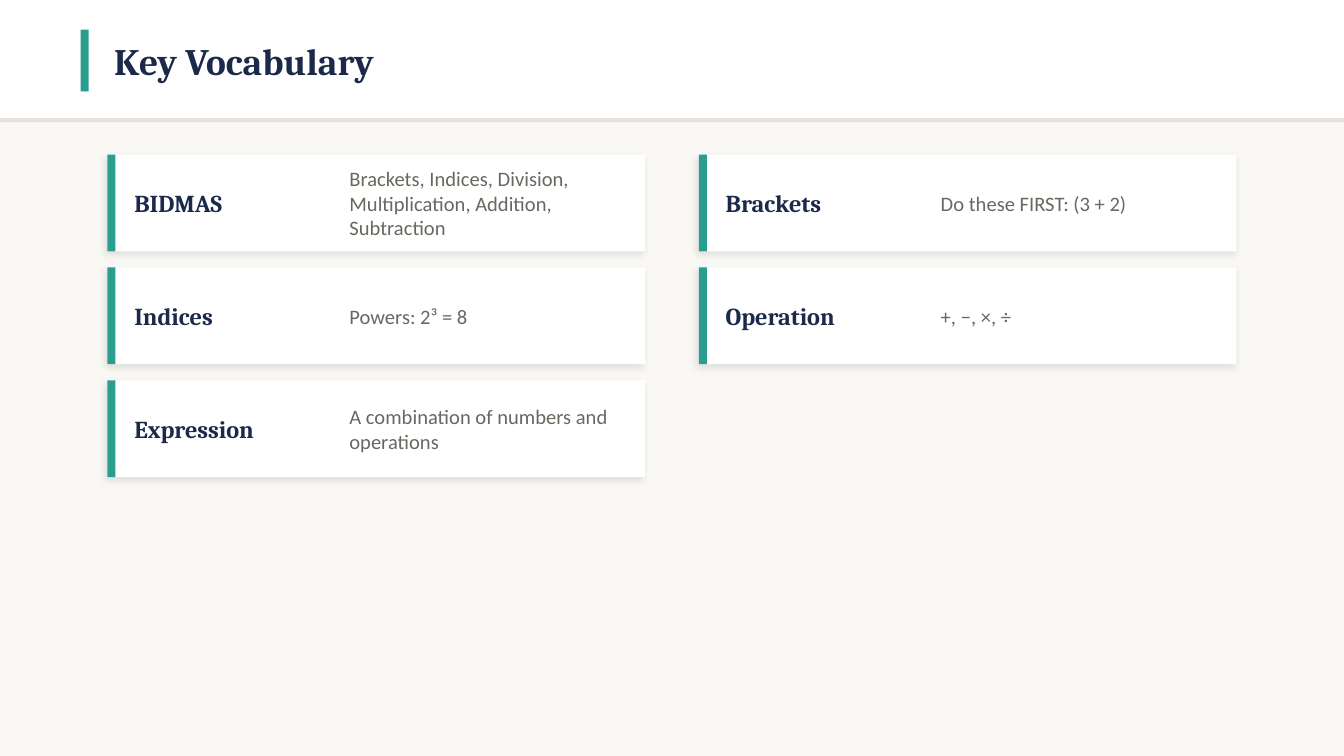
from dataclasses import dataclass

from pptx import Presentation
from pptx.dml.color import RGBColor
from pptx.enum.shapes import MSO_SHAPE
from pptx.enum.text import MSO_ANCHOR, MSO_AUTO_SIZE, PP_ALIGN
from pptx.oxml import parse_xml
from pptx.oxml.ns import nsdecls, qn
from pptx.util import Emu, Pt


@dataclass(frozen=True)
class Theme:
    """Colours, fonts and type sizes of the deck."""
    paper: str = "FAF8F5"
    card: str = "FFFFFF"
    rule: str = "E5E2DC"
    accent: str = "2A9D8F"
    navy: str = "1B2A4A"
    muted: str = "6B6660"
    heading_font: str = "Cambria"
    body_font: str = "Calibri"
    title_size: int = 20
    term_size: int = 13
    meaning_size: int = 11


THEME = Theme()
PX_PER_INCH = 200
EMU_PER_PX = 914400 // PX_PER_INCH
PAGE_WIDTH, PAGE_HEIGHT = 2000, 1125
ACCENT_WIDTH = 12
CARD_WIDTH, CARD_HEIGHT = 800, 144
COLUMNS, COLUMN_GAP, ROW_GAP = 2, 80, 24

VOCABULARY = [
    ("BIDMAS", "Brackets, Indices, Division, Multiplication, Addition, Subtraction"),
    ("Brackets", "Do these FIRST: (3 + 2)"),
    ("Indices", "Powers: 2³ = 8"),
    ("Operation", "+, −, ×, ÷"),
    ("Expression", "A combination of numbers and operations"),
]


def px(length):
    """Turn whole pixels into EMU."""
    return Emu(length * EMU_PER_PX)


def add_block(page, left, top, width, height, color):
    """Add a plain filled rectangle without line or shadow."""
    block = page.shapes.add_shape(
        MSO_SHAPE.RECTANGLE, px(left), px(top), px(width), px(height))
    block.fill.solid()
    block.fill.fore_color.rgb = RGBColor.from_string(color)
    block.line.fill.background()
    block.shadow.inherit = False
    return block


def add_soft_shadow(block):
    """Give a block a faint outer shadow."""
    effects = block.element.spPr.find(qn("a:effectLst"))
    effects.append(parse_xml(
        f'<a:outerShdw {nsdecls("a")} blurRad="{Pt(4)}" dist="{Pt(2)}" '
        f'dir="{135 * 60000}" algn="bl" rotWithShape="0">'
        '<a:srgbClr val="000000"><a:alpha val="10000"/></a:srgbClr></a:outerShdw>'))


def write_text(box, text, font_name, size, color, bold=False):
    """Fill a box with one left-aligned, vertically centred paragraph."""
    frame = box.text_frame
    frame.text = text
    frame.word_wrap = True
    frame.auto_size = MSO_AUTO_SIZE.NONE
    frame.vertical_anchor = MSO_ANCHOR.MIDDLE
    frame.margin_left = frame.margin_right = 0
    frame.margin_top = frame.margin_bottom = 0
    para = frame.paragraphs[0]
    para.alignment = PP_ALIGN.LEFT
    para.font.name = font_name
    para.font.size = Pt(size)
    para.font.bold = bold
    para.font.color.rgb = RGBColor.from_string(color)


def add_header(page, left, top, width, height, text):
    """Place the header band, its rule, accent bar and title."""
    add_block(page, left, top, width, height, THEME.card)
    add_block(page, left, top + height - 4, width, 6, THEME.rule)
    add_block(page, left + 120, top + 44, ACCENT_WIDTH, 92, THEME.accent)
    title = page.shapes.title
    title.left, title.top = px(left + 170), px(top + 30)
    title.width, title.height = px(1700), px(120)
    write_text(title, text, THEME.heading_font, THEME.title_size, THEME.navy, True)
    title.element.getparent().append(title.element)


def add_card(page, left, top, width, height, term, meaning):
    """Place one vocabulary card with its term and meaning."""
    add_soft_shadow(add_block(page, left, top, width, height, THEME.card))
    add_block(page, left, top, ACCENT_WIDTH, height, THEME.accent)
    term_box = page.shapes.add_textbox(px(left + 40), px(top), px(320), px(height))
    write_text(term_box, term, THEME.heading_font, THEME.term_size, THEME.navy, True)
    meaning_box = page.shapes.add_textbox(
        px(left + 360), px(top), px(width - 380), px(height))
    write_text(meaning_box, meaning, THEME.body_font, THEME.meaning_size, THEME.muted)


def add_card_grid(page, left, top, entries):
    """Place the vocabulary cards row by row."""
    for index, (term, meaning) in enumerate(entries):
        row, column = divmod(index, COLUMNS)
        add_card(page,
                 left + column * (CARD_WIDTH + COLUMN_GAP),
                 top + row * (CARD_HEIGHT + ROW_GAP),
                 CARD_WIDTH, CARD_HEIGHT, term, meaning)


def main():
    """Build and save the deck."""
    deck = Presentation()
    deck.slide_width, deck.slide_height = px(PAGE_WIDTH), px(PAGE_HEIGHT)
    page = deck.slides.add_slide(deck.slide_layouts.get_by_name("Title Only"))
    page.background.fill.solid()
    page.background.fill.fore_color.rgb = RGBColor.from_string(THEME.paper)
    add_header(page, 0, 0, PAGE_WIDTH, 180, "Key Vocabulary")
    add_card_grid(page, 160, 230, VOCABULARY)
    deck.save("out.pptx")


if __name__ == "__main__":
    main()
